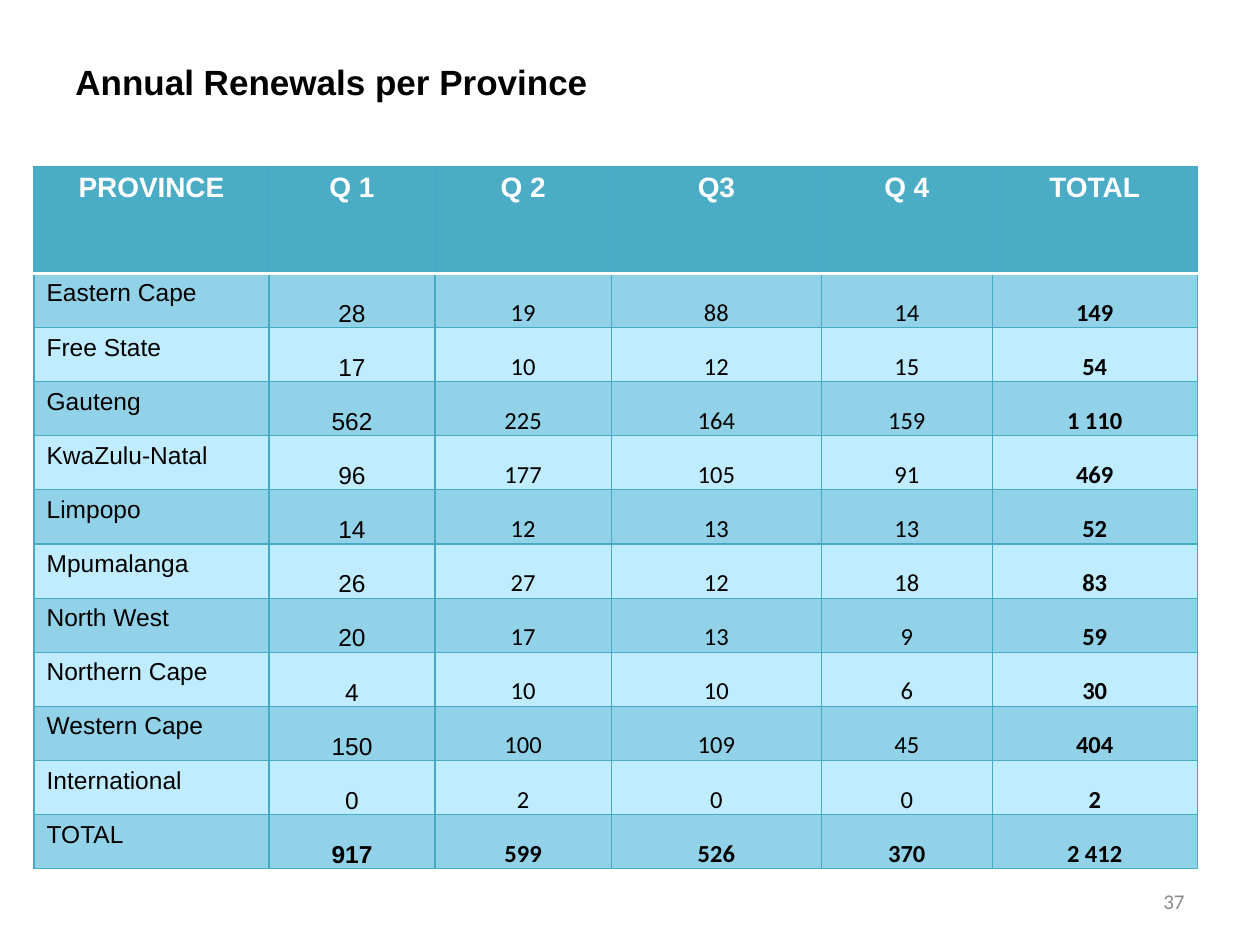
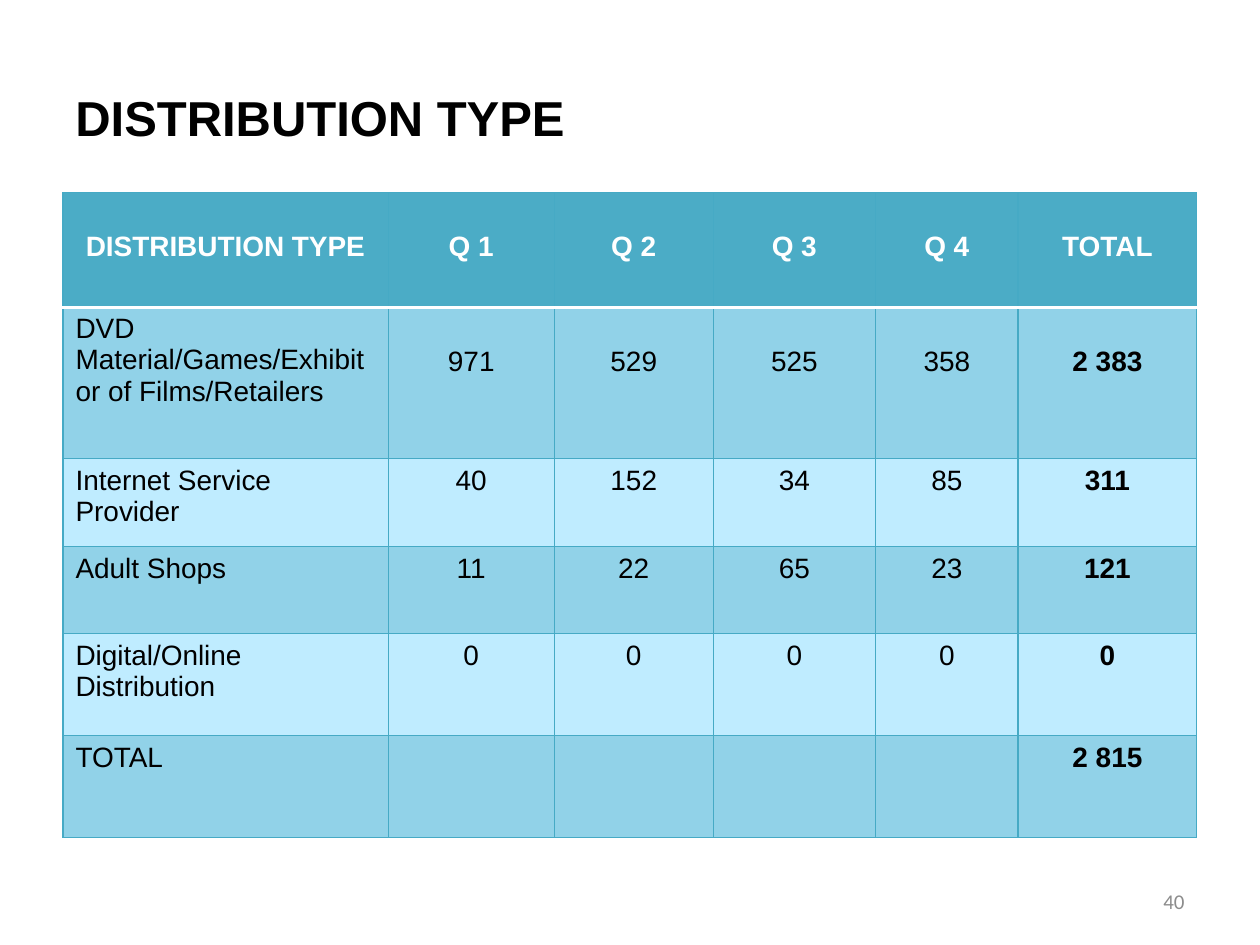
"""Build two table slides: annual renewals per province and per distribution type."""
from dataclasses import dataclass

from lxml.etree import SubElement
from pptx import Presentation
from pptx.dml.color import RGBColor as Rgb
from pptx.enum.text import MSO_ANCHOR as Anchor, PP_ALIGN as Align
from pptx.oxml.ns import qn
from pptx.util import Inches, Pt


@dataclass(frozen=True)
class Theme:
    header: str = "4BACC6"
    bands: tuple = ("91D2E8", "BFECFF")
    rule: str = "46AAC5"
    white: str = "FFFFFF"
    ink: str = "000000"
    page: str = "8C8C8C"
    heading_font: str = "Arial"
    number_font: str = "Calibri"
    header_size: int = 16
    page_size: int = 12
    rule_width: float = 0.75
    header_rule_width: float = 2


theme = Theme()
deck = Presentation()
deck.slide_width, deck.slide_height = Inches(10), Inches(7.5)
across, down = deck.slide_width / 100, deck.slide_height / 100


def write(frame, words, font, size, color, bold=False, align=Align.LEFT):
    frame.text = words
    frame.word_wrap = True
    paragraph = frame.paragraphs[0]
    paragraph.alignment = align
    for run in paragraph.runs:
        run.font.name, run.font.size, run.font.bold = font, Pt(size), bold
        run.font.color.rgb = Rgb.from_string(color)


def add_border(cell, index, side, color, width):
    line = SubElement(cell._tc.get_or_add_tcPr(), qn("a:" + side), w=str(Pt(width)))
    fill = SubElement(line, qn("a:solidFill"))
    SubElement(fill, qn("a:srgbClr"), val=color)
    cell._tc.get_or_add_tcPr().insert(index, line)


provinces = [
    ("PROVINCE", "Q 1", "Q 2", "Q3", "Q 4", "TOTAL"),
    ("Eastern Cape", "28", "19", "88", "14", "149"),
    ("Free State", "17", "10", "12", "15", "54"),
    ("Gauteng", "562", "225", "164", "159", "1 110"),
    ("KwaZulu-Natal", "96", "177", "105", "91", "469"),
    ("Limpopo", "14", "12", "13", "13", "52"),
    ("Mpumalanga", "26", "27", "12", "18", "83"),
    ("North West", "20", "17", "13", "9", "59"),
    ("Northern Cape", "4", "10", "10", "6", "30"),
    ("Western Cape", "150", "100", "109", "45", "404"),
    ("International", "0", "2", "0", "0", "2"),
    ("TOTAL", "917", "599", "526", "370", "2 412"),
]
distribution = [
    ("DISTRIBUTION TYPE", "Q 1", "Q 2", "Q 3", "Q 4", "TOTAL"),
    ("DVD Material/Games/Exhibitor of Films/Retailers", "971", "529", "525", "358", "2 383"),
    ("Internet Service Provider", "40", "152", "34", "85", "311"),
    ("Adult Shops", "11", "22", "65", "23", "121"),
    ("Digital/Online Distribution", "0", "0", "0", "0", "0"),
    ("TOTAL", "", "", "", "", "2 815"),
]
pages = [
    dict(title="Annual Renewals per Province", title_size=20, title_box=(80.6, 9.33),
         records=provinces, corner=(2.7, 17.6), body_size=14, page="37",
         widths=(18.65, 13.17, 14, 16.67, 13.56, 16.27), heights=(11.33,) + (5.73,) * 11,
         bottom_numbers=True, lowered_rows=()),
    dict(title="DISTRIBUTION TYPE", title_size=28, title_box=(90, 16.67),
         records=distribution, corner=(5, 20.4), body_size=16, page="40",
         widths=(25.8, 13.2, 12.6, 12.9, 11.3, 14.2), heights=(12.13, 16, 9.33, 9.2, 10.8, 10.8),
         bottom_numbers=False, lowered_rows=(0, 1)),
]

for page in pages:
    slide = deck.slides.add_slide(deck.slide_layouts[6])
    width, height = page["title_box"]
    title = slide.shapes.add_textbox(
        int(5 * across), int(4 * down), int(width * across), int(height * down)).text_frame
    title.vertical_anchor = Anchor.MIDDLE
    write(title, page["title"], theme.heading_font, page["title_size"], theme.ink, True)

    records, widths, heights = page["records"], page["widths"], page["heights"]
    left, top = page["corner"]
    table = slide.shapes.add_table(
        len(records), len(widths), int(left * across), int(top * down),
        int(sum(widths) * across), int(sum(heights) * down)).table
    table.horz_banding = False
    for column, share in zip(table.columns, widths):
        column.width = int(share * across)
    for row, share in zip(table.rows, heights):
        row.height = int(share * down)

    for r, record in enumerate(records):
        for c, words in enumerate(record):
            cell = table.cell(r, c)
            is_header, is_label = r == 0, c == 0
            is_total = c == len(record) - 1 or (r == len(records) - 1 and not is_label)
            is_bottom = page["bottom_numbers"] and not is_header and not is_label
            write(cell.text_frame, words,
                  theme.number_font if is_bottom and c > 1 else theme.heading_font,
                  theme.header_size if is_header else page["body_size"],
                  theme.white if is_header else theme.ink,
                  is_header or is_total,
                  Align.LEFT if is_label and not is_header else Align.CENTER)
            if is_bottom:
                cell.vertical_anchor = Anchor.BOTTOM
                cell.margin_left = cell.margin_right = cell.margin_top = cell.margin_bottom = 0
            elif r in page["lowered_rows"] and (is_header or not is_label):
                cell.margin_top = int(4.13 * down)
            cell.fill.solid()
            cell.fill.fore_color.rgb = Rgb.from_string(
                theme.header if is_header else theme.bands[(r - 1) % 2])
            for index, side in enumerate(("lnL", "lnR", "lnT", "lnB")):
                under_header = (r, side) in ((0, "lnB"), (1, "lnT"))
                add_border(cell, index, side,
                           theme.white if under_header else theme.rule,
                           theme.header_rule_width if under_header else theme.rule_width)

    number = slide.shapes.add_textbox(
        int(71.7 * across), int(92.67 * down), int(23.3 * across), int(5.33 * down)).text_frame
    number.vertical_anchor = Anchor.MIDDLE
    write(number, page["page"], theme.number_font, theme.page_size, theme.page, align=Align.RIGHT)

deck.save("out.pptx")
